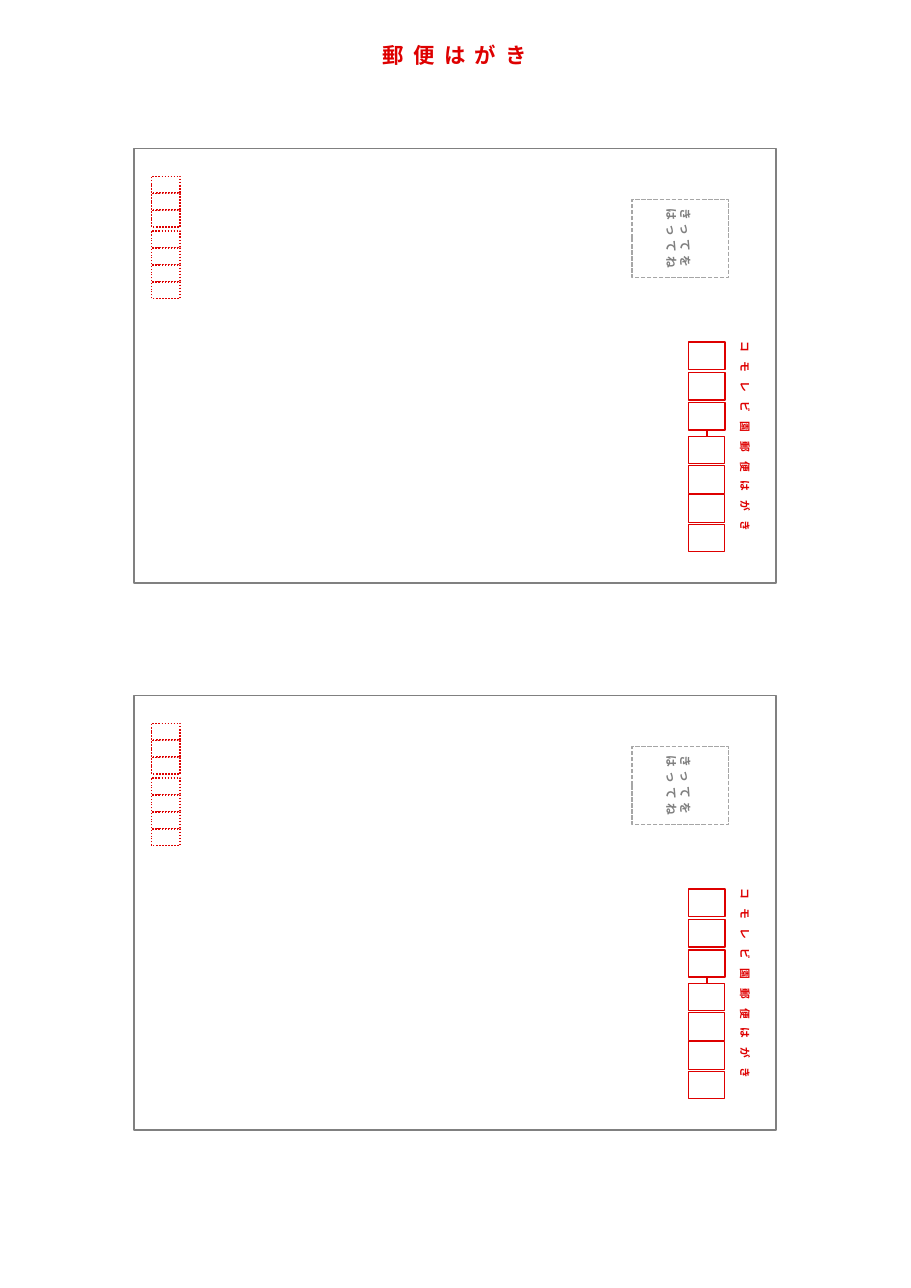
from dataclasses import dataclass

from lxml.etree import SubElement
from pptx import Presentation
from pptx.dml.color import RGBColor
from pptx.enum.dml import MSO_LINE_DASH_STYLE as Dash
from pptx.enum.shapes import MSO_CONNECTOR as Connector, MSO_SHAPE as Shape
from pptx.enum.text import MSO_ANCHOR as Anchor, MSO_AUTO_SIZE as AutoSize, PP_ALIGN as Align
from pptx.oxml.ns import qn
from pptx.util import Emu, Pt

EMU_PER_PX = 914400 // 200


@dataclass(frozen=True)
class Theme:
    font: str = "Noto Sans CJK JP"
    paper: str = "FFFFFF"
    red: str = "DE0000"
    grey: str = "808080"
    stamp_edge: str = "A6A6A6"
    title_size: float = 14
    label_size: float = 7
    stamp_size: float = 7.7
    wide_tracking: int = 6
    stamp_tracking: int = 3
    stamp_leading: float = 9.2


THEME = Theme()


def px(length):
    return Emu(int(length * EMU_PER_PX))


def turned(left, top, width, height):
    """Frame that covers the given box once it is rotated by 90 degrees."""
    shift = (width - height) / 2
    return px(left + shift), px(top - shift), px(height), px(width)


def add_box(page, box, color, weight=1, dash=None):
    rect = page.shapes.add_shape(Shape.RECTANGLE, *turned(*box))
    rect.rotation = 90
    rect.shadow.inherit = False
    rect.fill.solid()
    rect.fill.fore_color.rgb = RGBColor.from_string(THEME.paper)
    rect.line.color.rgb = RGBColor.from_string(color)
    rect.line.width = Pt(weight)
    if dash is not None:
        rect.line.dash_style = dash


def write(frame, lines, size, color, tracking, align=Align.LEFT, leading=None):
    frame.word_wrap = False
    frame.auto_size = AutoSize.SHAPE_TO_FIT_TEXT
    frame.vertical_anchor = Anchor.MIDDLE
    frame.margin_left = frame.margin_right = px(20)
    frame.margin_top = frame.margin_bottom = px(6)
    for index, line in enumerate(lines):
        para = frame.add_paragraph() if index else frame.paragraphs[0]
        para.alignment = align
        if leading:
            para.line_spacing = Pt(leading)
        span = para.add_run()
        span.text = line
        span.font.name = THEME.font
        span.font.size = Pt(size)
        span.font.bold = True
        span.font.color.rgb = RGBColor.from_string(color)
        props = span.font._element
        props.set("spc", str(tracking * 100))
        SubElement(props, qn("a:ea")).set("typeface", THEME.font)


def add_sideways_text(page, box, lines, size, color, tracking, leading=None):
    text_box = page.shapes.add_textbox(*turned(*box))
    text_box.rotation = 90
    write(text_box.text_frame, lines, size, color, tracking, leading=leading)


def add_column(page, left, top, width, height, pitch, count, weight, dash=None):
    for index in range(count):
        add_box(page, (left, top + index * pitch, width, height), THEME.red, weight, dash)


def add_postcode(page, left, top):
    """Recipient postcode: three boxes, a joining dash, four boxes."""
    width, height, last_four = 66, 50, top + 171
    middle = px(left + width // 2)
    link = page.shapes.add_connector(
        Connector.STRAIGHT, middle, px(last_four - 11), middle, px(last_four))
    link.line.color.rgb = RGBColor.from_string(THEME.red)
    link.line.width = Pt(1.25)
    SubElement(link._element.spPr, qn("a:effectLst"))
    add_column(page, left, top, width, height, 55, 3, 1)
    add_column(page, left, last_four, width, height, 53, 4, 0.5)


def add_sender_postcode(page, left, top):
    for offset, count in ((0, 3), (99, 4)):
        add_column(page, left, top + offset, 52, 30, 31, count, 1, Dash.ROUND_DOT)


def add_postcard(page, left, top, width, height):
    add_box(page, (left, top, width, height), THEME.grey)
    add_postcode(page, left + 1007, top + 351)
    add_sender_postcode(page, left + 32, top + 50)
    # Stamp area
    add_box(page, (left + 904, top + 92, 176, 142), THEME.stamp_edge, 1, Dash.SQUARE_DOT)
    # Card name and stamp request
    add_sideways_text(page, (left + 1088, top + 331, 44, 406), ["コモレビ園郵便はがき"],
                      THEME.label_size, THEME.red, THEME.wide_tracking)
    add_sideways_text(page, (left + 952, top + 88, 74, 164), ["きってを", "はってね"],
                      THEME.stamp_size, THEME.grey, THEME.stamp_tracking,
                      THEME.stamp_leading)


def add_title(page, left, top, width, height):
    title = page.shapes.title
    title.left, title.top, title.width, title.height = map(px, (left, top, width, height))
    write(title.text_frame, ["郵便はがき"], THEME.title_size, THEME.red,
          THEME.wide_tracking, Align.CENTER)


def main():
    deck = Presentation()
    deck.slide_width, deck.slide_height = px(1654), px(2338)
    page = deck.slides.add_slide(deck.slide_layouts[5])
    add_title(page, 666, 66, 320, 68)
    for row in range(2):
        add_postcard(page, 243, 270 + row * 993, 1166, 788)
    deck.save("out.pptx")


if __name__ == "__main__":
    main()
